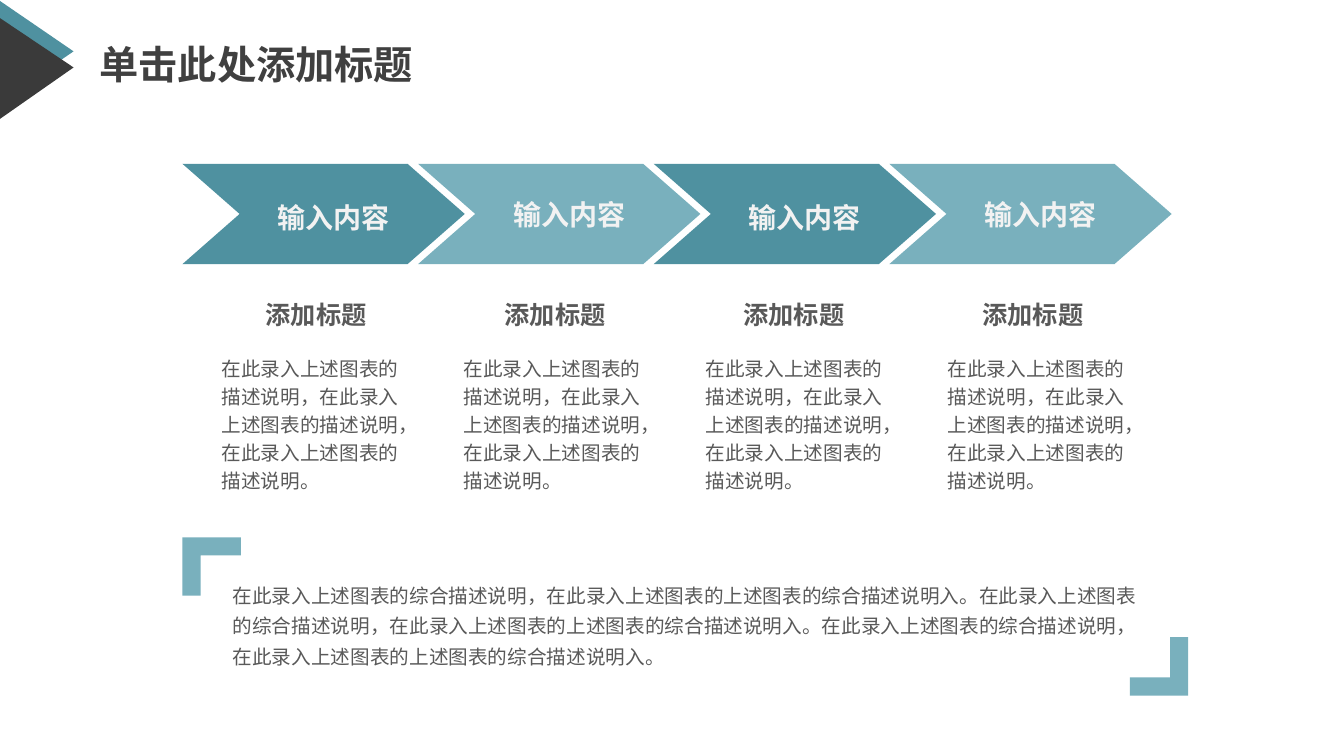
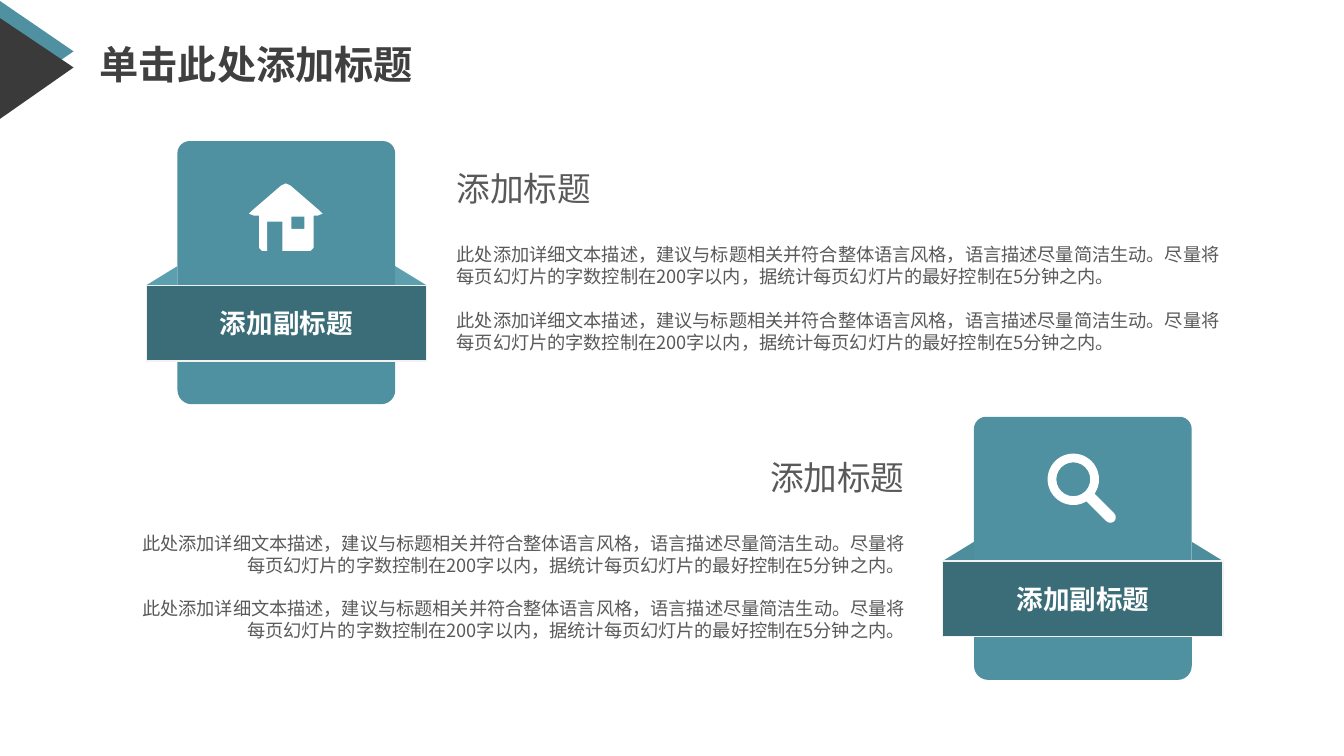
from pptx import Presentation, util as u
from pptx.dml.color import RGBColor
from pptx.enum import shapes, text
from pptx.oxml.ns import qn
from lxml import etree

WIDTH, HEIGHT = 133.3, 75
FONT = "Noto Sans CJK SC"
TEAL, LIGHT, DEEP = "4F91A0", "79B0BD", "3B6D78"
DARK, TITLE, GREY = "3A3A3A", "404040", "595959"
WHITE, PALE = "FFFFFF", "F2F2F2"
SHAPE = shapes.MSO_SHAPE
LEFT, CENTER, RIGHT = text.PP_ALIGN.LEFT, text.PP_ALIGN.CENTER, text.PP_ALIGN.RIGHT


def grid(cells):
    return u.Inches(cells / 10)


def rgb(color):
    return RGBColor.from_string(color)


def paint(sp, fill, line=None):
    sp.shadow.inherit = False
    sp.fill.solid()
    sp.fill.fore_color.rgb = rgb(fill)
    if line:
        sp.line.color.rgb = rgb(line)
        sp.line.width = u.Pt(1)
    else:
        sp.line.fill.background()
    return sp


def preset(s, kind, x, y, w, h, fill, line=None, adj=(), turn=0):
    sp = s.shapes.add_shape(kind, grid(x), grid(y), grid(w), grid(h))
    for i, value in enumerate(adj):
        sp.adjustments[i] = value
    sp.rotation = turn
    return paint(sp, fill, line)


def outline(s, fill, *contours):
    builder = None
    for contour in contours:
        start, *rest = [(grid(x), grid(y)) for x, y in contour]
        if builder is None:
            builder = s.shapes.build_freeform(*start)
        else:
            builder.move_to(*start)
        builder.add_line_segments(rest, close=True)
    return paint(builder.convert_to_shape(), fill)


def write(p, words, size, color, bold=False, align=LEFT, spacing=1.0, before=0, font=FONT):
    p.alignment = align
    p.line_spacing = spacing
    p.space_before = u.Pt(before)
    r = p.add_run()
    r.text = words
    r.font.size = u.Pt(size)
    r.font.bold = bold
    r.font.color.rgb = rgb(color)
    r.font.name = font
    ea = etree.SubElement(r.font._element, qn("a:ea"))
    ea.set("typeface", FONT)


def text_box(s, x, y, w, h, anchor=text.MSO_ANCHOR.TOP):
    tf = s.shapes.add_textbox(grid(x), grid(y), grid(w), grid(h)).text_frame
    tf.word_wrap = True
    tf.vertical_anchor = anchor
    return tf


def new_slide(prs):
    s = prs.slides.add_slide(prs.slide_layouts[6])
    for color, top, tip, bottom in ((TEAL, 0.1, 5.1, 10.1), (DARK, 1.8, 6.7, 11.8)):
        outline(s, color, [(0, top), (7.3, tip), (0, bottom)])
    tf = text_box(s, 8.9, 3.4, 52.8, 6.5, text.MSO_ANCHOR.MIDDLE)
    write(tf.paragraphs[0], "单击此处添加标题", 28, TITLE, True, spacing=0.9, font="Arial")
    return s


def chevron(s, x, fill, spacing):
    sp = preset(s, SHAPE.CHEVRON, x, 16.25, 28, 9.95, fill, adj=[0.57])
    tf = sp.text_frame
    tf.margin_left, tf.margin_right = grid(2), 0
    tf.vertical_anchor = text.MSO_ANCHOR.MIDDLE
    write(tf.paragraphs[0], "输入内容", 20, PALE, True, CENTER, spacing, font="Arial")


def step(s, i):
    fill, spacing = ((TEAL, 1.2), (LIGHT, 1.0))[i % 2]
    chevron(s, 18.1 + 23.37 * i, fill, spacing)
    tf = text_box(s, 21.35 + 23.7 * i, 29.2, 20, 4)
    write(tf.paragraphs[0], "添加标题", 18, GREY, True, CENTER)
    tf = text_box(s, 21 + 24 * i, 34.4, 20.7, 15.1)
    write(tf.paragraphs[0], "，".join(["在此录入上述图表的描述说明"] * 3) + "。", 14, GREY, spacing=1.2)


def bracket(s, x, y, side):
    arm, thick = 5.8 * side, 1.8 * side
    outline(s, LIGHT, [(x, y), (x + arm, y), (x + arm, y + thick),
                       (x + thick, y + thick), (x + thick, y + arm), (x, y + arm)])


def process_slide(prs):
    s = new_slide(prs)
    for i in range(4):
        step(s, i)
    bracket(s, 18.1, 53.3, 1)
    bracket(s, 117.85, 69, -1)
    tf = text_box(s, 22.1, 56.7, 93.4, 10.2)
    summary = "在此录入上述图表的综合描述说明，在此录入上述图表的上述图表的综合描述说明入。"
    write(tf.paragraphs[0], summary * 3, 14, GREY, spacing=1.3)


def card(s, x, y, flap):
    w, overhang, fold = 21.6, 3.1, 14.3
    corner = SHAPE.ROUND_2_SAME_RECTANGLE
    preset(s, corner, x, y + 21, w, 5.1, TEAL, adj=[0.274, 0], turn=180)
    preset(s, corner, x, y, w, fold, TEAL, adj=[0.084, 0])
    for edge, tip in ((x, x - overhang), (x + w, x + w + overhang)):
        outline(s, flap, [(tip, y + fold), (edge, y + fold - 1.9), (edge, y + fold)])
    sp = preset(s, SHAPE.RECTANGLE, x - overhang, y + fold, w + 2 * overhang, 7.5, DEEP, PALE)
    sp.text_frame.vertical_anchor = text.MSO_ANCHOR.MIDDLE
    write(sp.text_frame.paragraphs[0], "添加副标题", 19, WHITE, True, CENTER)


def description(s, x, y, align):
    tf = text_box(s, x, y, 79.8, 19.8)
    tf.margin_left = tf.margin_right = grid(1.3)
    tf.margin_top = tf.margin_bottom = grid(0.7)
    write(tf.paragraphs[0], "添加标题", 24, GREY, align=align)
    body = ("此处添加详细文本描述，建议与标题相关并符合整体语言风格，语言描述尽量简洁生动。"
            "尽量将每页幻灯片的字数控制在200字以内，据统计每页幻灯片的最好控制在5分钟之内。")
    for gap in (25, 15.6):
        write(tf.add_paragraph(), body, 13, GREY, align=align, before=gap)


def house(s):
    walls = [(25.2, 21.4), (24.7, 21.2), (25, 20.9), (27.9, 18.4), (28.35, 18.2),
             (28.8, 18.4), (31.7, 20.9), (32, 21.2), (31.5, 21.4), (31.1, 21.4),
             (31.1, 24.6), (30.8, 24.9), (28, 24.9), (28, 22), (26.5, 22),
             (26.5, 24.9), (26, 24.9), (25.7, 24.6), (25.7, 21.4)]
    window = [(28.9, 21.5), (28.9, 22.7), (30.2, 22.7), (30.2, 21.5)]
    outline(s, WHITE, walls, window)


def magnifier(s):
    preset(s, SHAPE.DONUT, 103.9, 45, 5.1, 5.1, WHITE, adj=[0.17])
    preset(s, SHAPE.ROUNDED_RECTANGLE, 107.1, 49.75, 4, 1.1, WHITE, adj=[0.5], turn=45)


def cards_slide(prs):
    s = new_slide(prs)
    card(s, 17.6, 14, "5C9FAE")
    house(s)
    description(s, 44, 16, LEFT)
    card(s, 96.6, 41.35, "4D8D9C")
    magnifier(s)
    description(s, 11.2, 44.6, RIGHT)


def main():
    prs = Presentation()
    prs.slide_width, prs.slide_height = grid(WIDTH), grid(HEIGHT)
    process_slide(prs)
    cards_slide(prs)
    prs.save("out.pptx")


if __name__ == "__main__":
    main()
